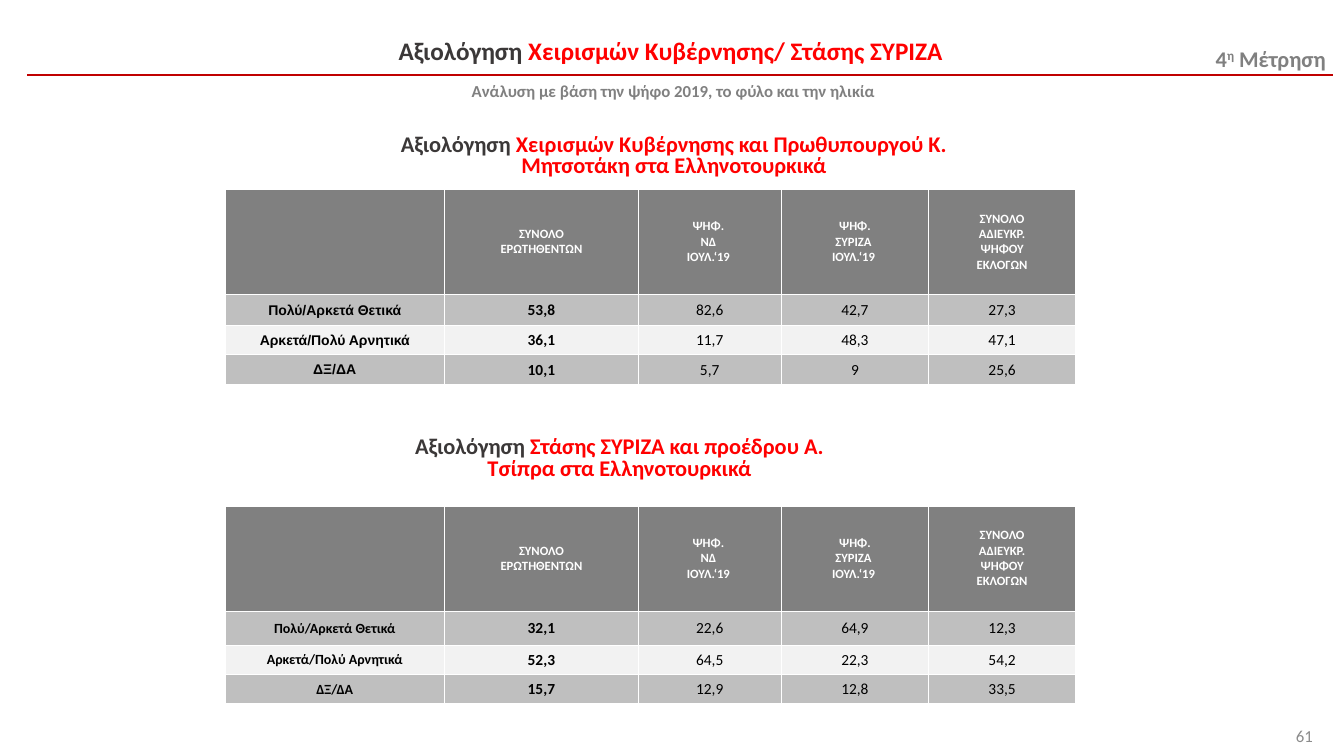
from dataclasses import dataclass

from lxml import etree
from pptx import Presentation
from pptx.dml.color import RGBColor
from pptx.enum import shapes, text
from pptx.oxml.ns import qn
from pptx.util import Inches, Pt


@dataclass(frozen=True)
class Theme:
    font: str = "Calibri"
    label_font: str = "Arial"
    dark: str = "3B3838"
    red: str = "FF0000"
    rule: str = "C00000"
    grey: str = "808080"
    number: str = "8C8C8C"
    band: str = "BFBFBF"
    light: str = "F2F2F2"
    white: str = "FFFFFF"
    black: str = "000000"
    title: int = 18
    heading: int = 16
    note: int = 12
    value: int = 11
    label: int = 10
    header: int = 9


T = Theme()
CENTER = text.PP_ALIGN.CENTER
COLUMNS = [2.18, 1.92, 1.42, 1.46, 1.46]
HEADERS = [
    [],
    ["ΣΥΝΟΛΟ", "ΕΡΩΤΗΘΕΝΤΩΝ"],
    ["ΨΗΦ. ", "ΝΔ ", "ΙΟΥΛ.‘19 "],
    ["ΨΗΦ.", "ΣΥΡΙΖΑ ", "ΙΟΥΛ.‘19 "],
    ["ΣΥΝΟΛΟ", "ΑΔΙΕΥΚΡ.", "ΨΗΦΟΥ", "ΕΚΛΟΓΩΝ"],
]
LABELS = ["Πολύ/Αρκετά Θετικά", "Αρκετά/Πολύ Αρνητικά", "ΔΞ/ΔΑ"]
GOVERNMENT = [
    ["53,8", "82,6", "42,7", "27,3"],
    ["36,1", "11,7", "48,3", "47,1"],
    ["10,1", "5,7", "9", "25,6"],
]
OPPOSITION = [
    ["32,1", "22,6", "64,9", "12,3"],
    ["52,3", "64,5", "22,3", "54,2"],
    ["15,7", "12,9", "12,8", "33,5"],
]


def box(*lengths):
    return [Inches(n) for n in lengths]


def add_run(p, words, size, color, bold=True, font=T.font):
    r = p.add_run()
    r.text = words
    r.font.size = Pt(size)
    r.font.name = font
    r.font.bold = bold
    r.font.color.rgb = RGBColor.from_string(color)
    return r


def add_title(s):
    sp = s.shapes.title
    sp.left, sp.top, sp.width, sp.height = box(-0.09, 0.3, 13.54, 0.94)
    tf = sp.text_frame
    tf.auto_size = text.MSO_AUTO_SIZE.NONE
    tf.vertical_anchor = text.MSO_ANCHOR.TOP
    p = tf.paragraphs[0]
    p.alignment = CENTER
    add_run(p, "Αξιολόγηση ", T.title, T.dark)
    add_run(p, "Χειρισμών Κυβέρνησης/ Στάσης ΣΥΡΙΖΑ ", T.title, T.red)
    p = tf.add_paragraph()
    p.alignment = CENTER
    p.space_before = Pt(11)
    add_run(p, "Ανάλυση με βάση την ψήφο 2019, το φύλο και την ηλικία", T.note, T.grey)


def add_rule(s):
    x1, y1, x2, y2 = box(0.27, 0.74, 13.22, 0.74)
    line = s.shapes.add_connector(shapes.MSO_CONNECTOR.STRAIGHT, x1, y1, x2, y2)
    line.line.color.rgb = RGBColor.from_string(T.rule)
    line.line.width = Pt(1.5)
    etree.SubElement(line._element.spPr, qn("a:effectLst"))


def add_wave(s):
    tf = s.shapes.add_textbox(*box(11.96, 0.4, 1.37, 0.37)).text_frame
    tf.word_wrap = False
    p = tf.paragraphs[0]
    add_run(p, "4", T.heading, T.grey)
    r = add_run(p, "η", T.heading, T.grey)
    r._r.get_or_add_rPr().set("baseline", "30000")
    add_run(p, " Μέτρηση", T.heading, T.grey)


def add_heading(s, place, subject):
    tf = s.shapes.add_textbox(*box(*place)).text_frame
    tf.word_wrap = True
    p = tf.paragraphs[0]
    p.alignment = CENTER
    p.line_spacing = 0.8
    add_run(p, "Αξιολόγηση ", T.heading, T.dark)
    add_run(p, subject, T.heading, T.red)


def add_page_number(s):
    sp = s.shapes.add_shape(shapes.MSO_SHAPE.RECTANGLE, *box(12.48, 7.1, 0.64, 0.4))
    sp.shadow.inherit = False
    sp.fill.solid()
    sp.fill.fore_color.rgb = RGBColor.from_string(T.white)
    sp.line.fill.background()
    sp.text_frame.vertical_anchor = text.MSO_ANCHOR.MIDDLE
    p = sp.text_frame.paragraphs[0]
    p.alignment = text.PP_ALIGN.RIGHT
    add_run(p, "61", T.note, T.number, bold=False)


def style_cell(cell, color):
    tcPr = cell._tc.get_or_add_tcPr()
    for side in ("a:lnL", "a:lnR", "a:lnT", "a:lnB"):
        ln = etree.SubElement(tcPr, qn(side), w=str(Pt(0.5)))
        fill = etree.SubElement(ln, qn("a:solidFill"))
        etree.SubElement(fill, qn("a:srgbClr"), val=T.white)
    cell.fill.solid()
    cell.fill.fore_color.rgb = RGBColor.from_string(color)
    cell.vertical_anchor = text.MSO_ANCHOR.MIDDLE


def fill_header(cell, lines):
    style_cell(cell, T.grey)
    tf = cell.text_frame
    for i, words in enumerate(lines):
        p = tf.add_paragraph() if i else tf.paragraphs[0]
        p.alignment = CENTER
        pPr = p._p.get_or_add_pPr()
        pPr.set("marL", str(Inches(0.38)))
        pPr.set("indent", str(Inches(-0.38)))
        add_run(p, words, T.header, T.white)


def fill_body(cell, words, color, size, bold, font):
    style_cell(cell, color)
    cell.margin_left = cell.margin_right = cell.margin_top = Inches(0.01)
    cell.margin_bottom = 0
    p = cell.text_frame.paragraphs[0]
    p.alignment = CENTER
    add_run(p, words, size, T.black, bold, font)


def add_results(s, top, heights, values, label_font):
    place = box(2.23, top, sum(COLUMNS), sum(heights))
    table = s.shapes.add_table(len(heights), len(COLUMNS), *place).table
    table.first_row = table.horz_banding = False
    for column, width in zip(table.columns, COLUMNS):
        column.width = Inches(width)
    for row, height in zip(table.rows, heights):
        row.height = Inches(height)
    for j, lines in enumerate(HEADERS):
        fill_header(table.cell(0, j), lines)
    for i, (label, numbers) in enumerate(zip(LABELS, values), 1):
        color = T.band if i % 2 else T.light
        fill_body(table.cell(i, 0), label, color, T.label, True, label_font)
        for j, number in enumerate(numbers, 1):
            fill_body(table.cell(i, j), number, color, T.value, j == 1, T.font)


def main():
    prs = Presentation()
    prs.slide_width, prs.slide_height = box(13.33, 7.5)
    s = prs.slides.add_slide(prs.slide_layouts[5])
    add_rule(s)
    add_wave(s)
    add_title(s)
    add_page_number(s)
    add_heading(s, (3.47, 1.29, 6.43, 0.48),
                "Χειρισμών Κυβέρνησης και Πρωθυπουργού Κ. Μητσοτάκη στα Ελληνοτουρκικά")
    add_results(s, 1.88, [1.04, 0.31, 0.29, 0.29], GOVERNMENT, T.label_font)
    add_heading(s, (3.86, 4.29, 4.57, 0.48),
                "Στάσης ΣΥΡΙΖΑ και προέδρου Α. Τσίπρα στα Ελληνοτουρκικά")
    add_results(s, 5.02, [1.04, 0.34, 0.29, 0.29], OPPOSITION, T.font)
    prs.save("out.pptx")


if __name__ == "__main__":
    main()
